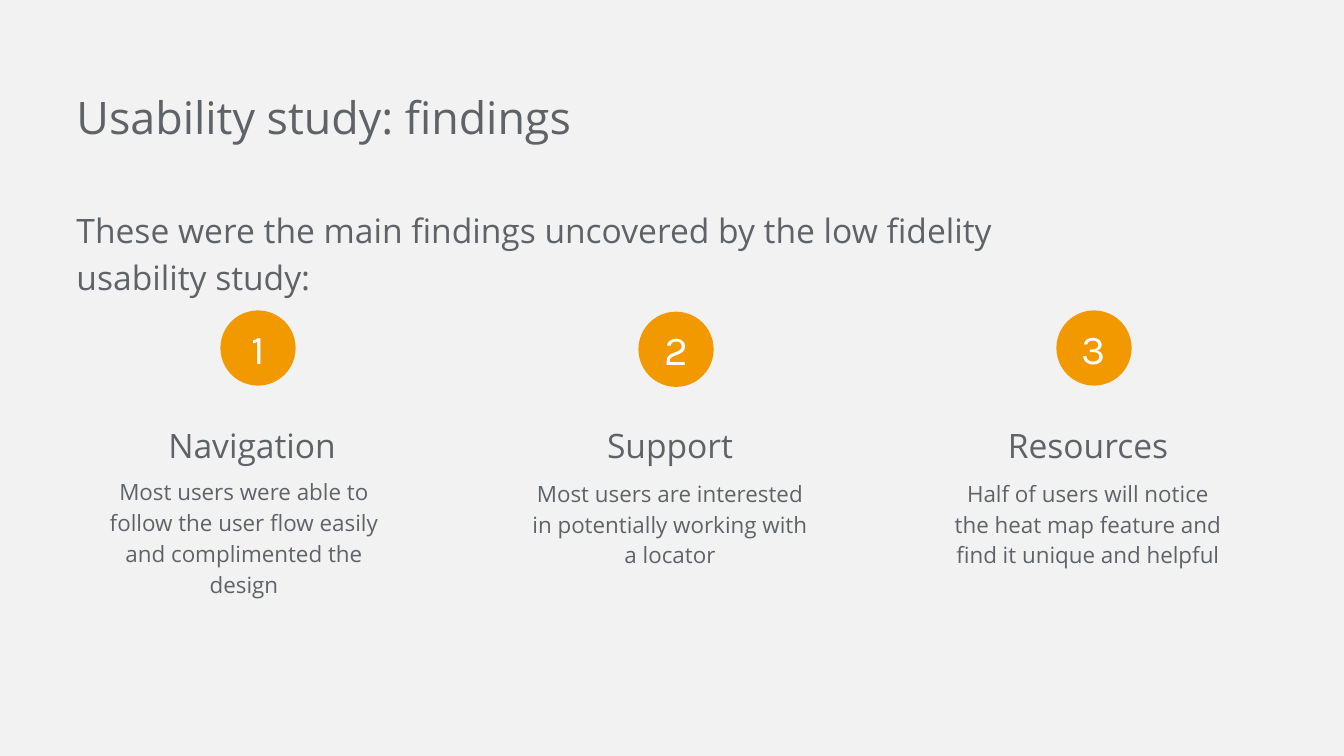
"""Build the usability study findings slide."""
import dataclasses

import pptx
import pptx.dml.color
import pptx.enum.shapes
import pptx.enum.text
import pptx.util

Pt = pptx.util.Pt
Align = pptx.enum.text.PP_ALIGN


@dataclasses.dataclass(frozen=True)
class Theme:
    background: str = "F2F2F2"
    text: str = "5F6368"
    accent: str = "F29900"
    badge_text: str = "FFFFFF"
    text_font: str = "Open Sans"
    badge_font: str = "Karla"
    title_size: float = 24
    heading_size: float = 18
    body_size: float = 12
    badge_size: float = 22


THEME = Theme()
COLUMN_LEFT = 64.8
COLUMN_PITCH = 223.92
HEADING_WIDTH = 147.6
BODY_WIDTH = 156.2
BADGE_DIAMETER = 40.3
BADGE_OFFSET = 53.3

# Each finding: heading, body, body offset, body top, body height, badge top
FINDINGS = [
    ("Navigation", "Most users were able to follow the user flow easily and complimented the design",
     -8.6, 247, 81.4, 166.3),
    ("Support", "Most users are interested in potentially working with a locator",
     -4.3, 247.7, 64.8, 167),
    ("Resources", "Half of users will notice the heat map feature and find it unique and helpful",
     -4.3, 247.7, 64.8, 166.3),
]


def color(value):
    return pptx.dml.color.RGBColor.from_string(value)


def set_text(shape, text, font_name, size, text_color, align, spacing, margins):
    text_frame = shape.text_frame
    text_frame.word_wrap = True
    text_frame.margin_left, text_frame.margin_top, text_frame.margin_right, text_frame.margin_bottom = map(Pt, margins)
    text_frame.text = text
    paragraph = text_frame.paragraphs[0]
    paragraph.alignment = align
    paragraph.line_spacing = spacing
    font = paragraph.runs[0].font
    font.name = font_name
    font.size = Pt(size)
    font.color.rgb = color(text_color)


def add_text(slide, text, left, top, width, height, size, align=Align.LEFT, spacing=1.0):
    shape = slide.shapes.add_textbox(Pt(left), Pt(top), Pt(width), Pt(height))
    set_text(shape, text, THEME.text_font, size, THEME.text, align, spacing, (0, 7.2, 7.2, 7.2))


def add_badge(slide, text, left, top):
    shape = slide.shapes.add_shape(pptx.enum.shapes.MSO_SHAPE.OVAL, Pt(left), Pt(top),
                                   Pt(BADGE_DIAMETER), Pt(BADGE_DIAMETER))
    shape.shadow.inherit = False
    shape.fill.solid()
    shape.fill.fore_color.rgb = color(THEME.accent)
    shape.line.fill.background()
    set_text(shape, text, THEME.badge_font, THEME.badge_size, THEME.badge_text,
             Align.CENTER, 1.0, (0, 0, 0, 0))
    shape.text_frame.vertical_anchor = pptx.enum.text.MSO_ANCHOR.MIDDLE


def add_finding(slide, index, finding):
    heading, body, body_offset, body_top, body_height, badge_top = finding
    left = COLUMN_LEFT + index * COLUMN_PITCH
    add_text(slide, body, left + body_offset, body_top, BODY_WIDTH, body_height,
             THEME.body_size, Align.CENTER, 1.15)
    add_text(slide, heading, left, 209.5, HEADING_WIDTH, 47.5,
             THEME.heading_size, Align.CENTER, 1.5)
    add_badge(slide, str(index + 1), left + BADGE_OFFSET, badge_top)


def main():
    presentation = pptx.Presentation()
    presentation.slide_width = Pt(720)
    presentation.slide_height = Pt(405)
    slide = presentation.slides.add_slide(presentation.slide_layouts[6])
    slide.background.fill.solid()
    slide.background.fill.fore_color.rgb = color(THEME.background)
    add_text(slide, "Usability study: findings", 41, 41, 484.6, 43.9, THEME.title_size)
    add_text(slide, "These were the main findings uncovered by the low fidelity usability study:",
             41, 102.2, 511.2, 64.8, THEME.heading_size, spacing=1.15)
    for index, finding in enumerate(FINDINGS):
        add_finding(slide, index, finding)
    presentation.save("out.pptx")


if __name__ == "__main__":
    main()
